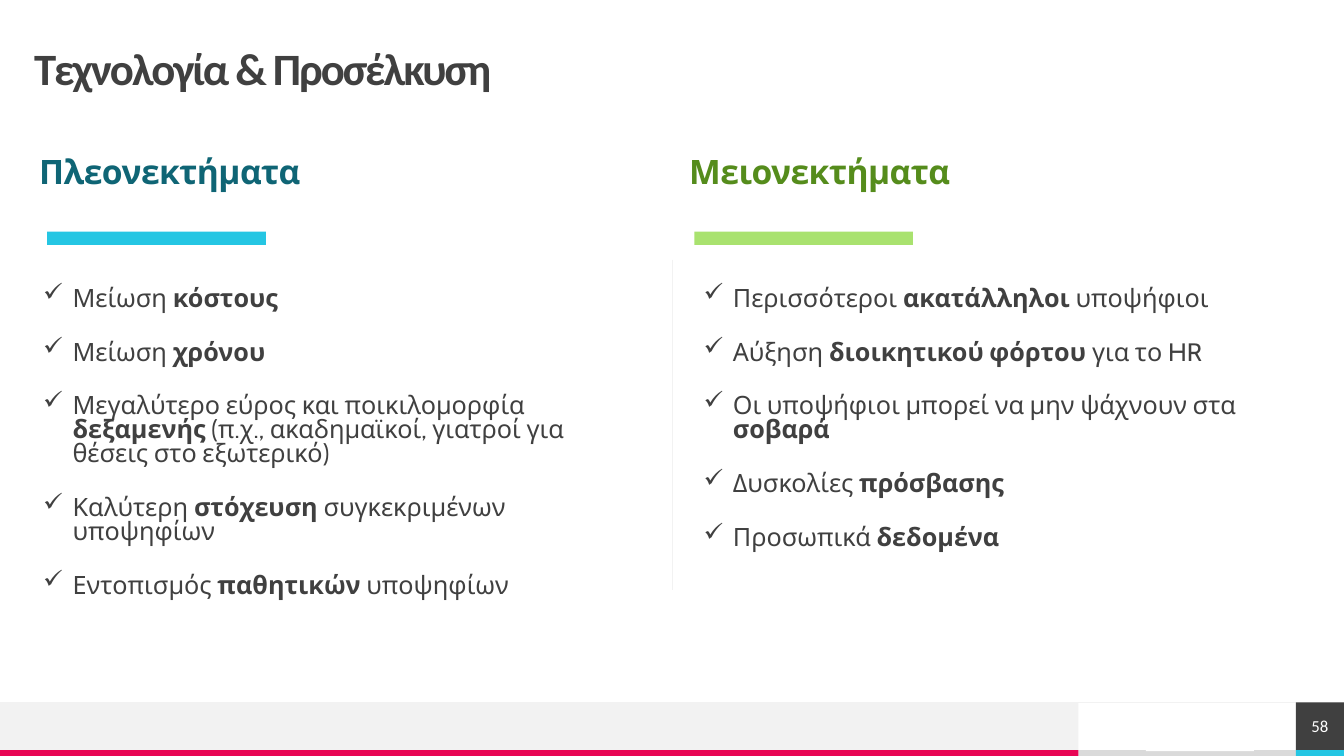
from lxml.etree import SubElement
from pptx import Presentation
from pptx.dml.color import RGBColor
from pptx.enum.shapes import MSO_CONNECTOR, MSO_SHAPE
from pptx.enum.text import MSO_ANCHOR, PP_ALIGN
from pptx.oxml.ns import qn
from pptx.util import Cm, Pt

SLIDE_WIDTH, SLIDE_HEIGHT = 33.87, 19.05
FOOTER_TOP, STRIPE_TOP = 17.7, 18.9
FOOTER_SPLIT, NUMBER_LEFT = 27.18, 32.66
DARK, PALE, WHITE, CYAN = "404040", "F2F2F2", "FFFFFF", "25C6E3"

ADVANTAGES = [
    ("Μείωση ", "κόστους", ""),
    ("Μείωση ", "χρόνου", ""),
    ("Μεγαλύτερο εύρος και ποικιλομορφία ", "δεξαμενής",
     " (π.χ., ακαδημαϊκοί, γιατροί για θέσεις στο εξωτερικό)"),
    ("Καλύτερη ", "στόχευση", " συγκεκριμένων υποψηφίων"),
    ("Εντοπισμός ", "παθητικών", " υποψηφίων"),
]
DISADVANTAGES = [
    ("Περισσότεροι ", "ακατάλληλοι", " υποψήφιοι"),
    ("Αύξηση ", "διοικητικού φόρτου", " για το HR"),
    ("Οι υποψήφιοι μπορεί να μην ψάχνουν στα ", "σοβαρά", ""),
    ("Δυσκολίες ", "πρόσβασης", ""),
    ("Προσωπικά ", "δεδομένα", ""),
]


def rgb(value):
    """Turn a hex string into a colour."""
    return RGBColor.from_string(value)


def set_font(paragraph, name, size, color, bold=None):
    """Set the font shared by all runs of a paragraph."""
    font = paragraph.font
    font.name, font.size, font.bold = name, Pt(size), bold
    font.color.rgb = rgb(color)


def set_tracking(paragraph, points):
    """Set the letter spacing of every run."""
    for run in paragraph.runs:
        run._r.get_or_add_rPr().set("spc", str(round(points * 100)))


def clear_margins(frame):
    """Remove the insets and wrap the text."""
    frame.margin_left = frame.margin_right = 0
    frame.margin_top = frame.margin_bottom = 0
    frame.word_wrap = True


def add_block(slide, left, top, width, height, color):
    """Add a plain filled rectangle."""
    block = slide.shapes.add_shape(
        MSO_SHAPE.RECTANGLE, Cm(left), Cm(top), Cm(width), Cm(height))
    block.shadow.inherit = False
    block.fill.solid()
    block.fill.fore_color.rgb = rgb(color)
    block.line.fill.background()
    return block


def add_rule(slide, x1, y1, x2, y2):
    """Add a thin pale line."""
    rule = slide.shapes.add_connector(
        MSO_CONNECTOR.STRAIGHT, Cm(x1), Cm(y1), Cm(x2), Cm(y2))
    rule.line.color.rgb = rgb(PALE)
    rule.line.width = Pt(0.5)
    SubElement(rule._element.spPr, qn("a:effectLst"))


def add_frame(slide, left, top, width, height):
    """Add a text box without insets and return its text frame."""
    frame = slide.shapes.add_textbox(
        Cm(left), Cm(top), Cm(width), Cm(height)).text_frame
    clear_margins(frame)
    return frame


def add_title(slide, text):
    """Fill and place the title."""
    title = slide.shapes.title
    title.left, title.top = Cm(0.86), Cm(1.19)
    title.width, title.height = Cm(31.5), Cm(1.19)
    frame = title.text_frame
    clear_margins(frame)
    frame.vertical_anchor = MSO_ANCHOR.MIDDLE
    frame.text = text
    paragraph = frame.paragraphs[0]
    paragraph.alignment = PP_ALIGN.LEFT
    paragraph.line_spacing = 0.9
    set_font(paragraph, "Calibri", 32, DARK, True)
    set_tracking(paragraph, -1.5)


def add_heading(slide, left, text, color):
    """Add a column heading."""
    frame = add_frame(slide, left, 3.91, 15.2, 1)
    frame.text = text
    paragraph = frame.paragraphs[0]
    paragraph.line_spacing = 0.9
    set_font(paragraph, "Cabin", 24, color, True)
    set_tracking(paragraph, -0.4)


def add_checklist(slide, left, height, items):
    """Add a ticked list whose middle words are bold."""
    frame = add_frame(slide, left, 7.26, 13.56, height)
    for index, parts in enumerate(items):
        paragraph = frame.add_paragraph() if index else frame.paragraphs[0]
        paragraph.line_spacing = 0.79
        paragraph.space_before = Pt(21.4 if index else 0)
        set_font(paragraph, "Cabin", 18, DARK)
        properties = paragraph._p.get_or_add_pPr()
        properties.set("marL", str(Cm(0.74)))
        properties.set("indent", str(-Cm(0.74)))
        tick = properties.makeelement(qn("a:buChar"), {"char": "✓"})
        properties.find(qn("a:defRPr")).addprevious(tick)
        for text, bold in zip(parts, (False, True, False)):
            if text:
                run = paragraph.add_run()
                run.text, run.font.bold = text, bold


def add_footer(slide, number):
    """Add the footer band, its stripes and the slide number."""
    band = STRIPE_TOP - FOOTER_TOP
    stripe = SLIDE_HEIGHT - STRIPE_TOP
    number_width = SLIDE_WIDTH - NUMBER_LEFT
    add_block(slide, FOOTER_SPLIT, STRIPE_TOP, NUMBER_LEFT - FOOTER_SPLIT, stripe, "DADADA")
    add_block(slide, 0, FOOTER_TOP, FOOTER_SPLIT, band, PALE)
    add_block(slide, 0, STRIPE_TOP, FOOTER_SPLIT, stripe, "E80554")
    add_block(slide, NUMBER_LEFT, STRIPE_TOP, number_width, stripe, CYAN)
    add_rule(slide, SLIDE_WIDTH, FOOTER_TOP, 0, FOOTER_TOP)
    add_block(slide, 28.88, 17.73, 2.72, band, WHITE)
    frame = add_block(slide, NUMBER_LEFT, FOOTER_TOP, number_width, band, DARK).text_frame
    clear_margins(frame)
    frame.vertical_anchor = MSO_ANCHOR.MIDDLE
    frame.text = number
    frame.paragraphs[0].alignment = PP_ALIGN.CENTER
    set_font(frame.paragraphs[0], "Calibri", 12, WHITE)


def main():
    """Build and save the slide."""
    deck = Presentation()
    deck.slide_width, deck.slide_height = Cm(SLIDE_WIDTH), Cm(SLIDE_HEIGHT)
    slide = deck.slides.add_slide(deck.slide_layouts[5])
    add_footer(slide, "58")
    add_title(slide, "Τεχνολογία & Προσέλκυση")
    add_heading(slide, 0.99, "Πλεονεκτήματα", "0F6575")
    add_heading(slide, 17.37, "Μειονεκτήματα", "558C1C")
    add_block(slide, 1.19, 5.84, 5.51, 0.33, CYAN)
    add_block(slide, 17.5, 5.84, 5.51, 0.33, "A9E26F")
    add_rule(slide, 16.94, 6.55, 16.94, 14.86)
    add_checklist(slide, 1.09, 8.31, ADVANTAGES)
    add_checklist(slide, 17.73, 6.1, DISADVANTAGES)
    deck.save("out.pptx")


main()
